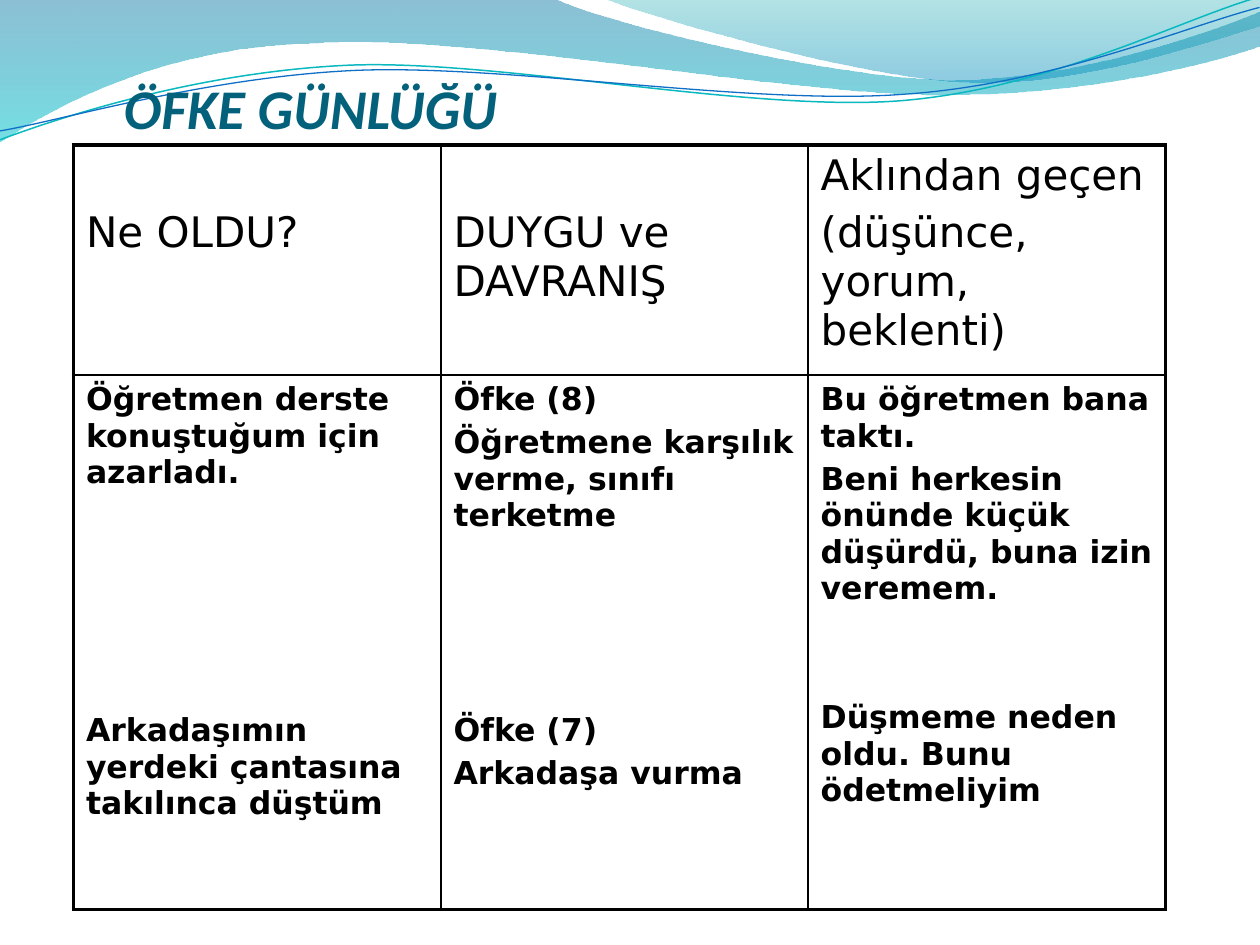
from dataclasses import dataclass

import pptx
import pptx.dml.color
import pptx.enum.text
import pptx.oxml
import pptx.oxml.ns
import pptx.util

Cm, Pt = pptx.util.Cm, pptx.util.Pt
qn = pptx.oxml.ns.qn


@dataclass(frozen=True)
class Theme:
    title_font: str = "Calibri"
    table_font: str = "DejaVu Sans"
    title_size: int = 32
    heading_size: int = 24
    body_size: int = 18
    title_color: str = "04617B"
    ink: str = "000000"
    # Gradient stops: colour and opacity in percent
    band_fill: tuple = (("0074A1", 45), ("00C6CF", 55))
    swoosh_fill: tuple = (("00A1A9", 30), ("008BBF", 45))
    teal: str = "0AB8BF"
    blue: str = "0F6FC6"
    outer_border: float = 2.25
    inner_border: float = 1


# Outlines in cm: a pair is a straight step, six numbers are a Bézier step.
BAND = [(0, 0), (11.18, -0.03),
        (12.09, 0.43, 16.87, 1.6, 19.25, 1.6), (21.67, 1.6, 24.33, 0.66, 25.4, 0.23),
        (25.43, 0.91),
        (24.97, 1.12, 22.1, 1.93, 18.95, 1.91), (15.8, 1.91, 9.7, 0.71, 6.53, 0.86),
        (3.28, 0.91, 1.17, 2.11, -0.03, 2.87)]
SWOOSH = [(12.17, -0.03),
          (12.93, 0.28, 17.32, 1.57, 19.53, 1.65), (21.74, 1.75, 24.41, 0.81, 25.4, 0.53),
          (25.4, 0)]
# Waves are given level and then tilted.
WAVE_TILT = 357.3
TEAL_WAVE = [(-0.05, 2.22),
             (1.19, 1.82, 4.01, 1.04, 7.05, 1.05), (10.05, 1.07, 15.02, 2.37, 18.08, 2.29),
             (21.13, 2.2, 23.86, 0.91, 25.4, 0.55)]
BLUE_WAVE = [(-0.04, 2.04),
             (1.16, 1.9, 4.17, 1.15, 7.2, 1.16), (10.25, 1.18, 15.13, 2.25, 18.19, 2.16),
             (21.22, 2.1, 23.93, 1.06, 25.44, 0.75)]

# Each cell lists (text, number of lines left free above it).
HEADINGS = [
    [("Ne OLDU?", 1)],
    [("DUYGU ve DAVRANIŞ", 1)],
    [("Aklından geçen", 0), ("(düşünce, yorum, beklenti)", 0)],
]
ENTRIES = [
    [("Öğretmen derste konuştuğum için azarladı.", 0),
     ("Arkadaşımın yerdeki çantasına takılınca düştüm", 5)],
    [("Öfke (8)", 0), ("Öğretmene karşılık verme, sınıfı terketme", 0),
     ("Öfke (7)", 4), ("Arkadaşa vurma", 0)],
    [("Bu öğretmen bana taktı.", 0),
     ("Beni herkesin önünde küçük düşürdü, buna izin veremem.", 0),
     ("Düşmeme neden oldu. Bunu ödetmeliyim", 2)],
]


class Painter:
    def __init__(self, page, theme):
        self.page = page
        self.theme = theme

    def color(self, value):
        return pptx.dml.color.RGBColor.from_string(value)

    def style(self, para, font, size, color, bold=False, italic=False):
        for span in para.runs:
            span.font.name = font
            span.font.size = Pt(size)
            span.font.bold = bold
            span.font.italic = italic
            span.font.color.rgb = self.color(color)

    def outline(self, steps, close):
        """Build through all points, then join each Bézier step's three into a curve."""
        points = [(Cm(step[i]), Cm(step[i + 1]))
                  for step in steps for i in range(0, len(step), 2)]
        builder = self.page.shapes.build_freeform(*points[0])
        builder.add_line_segments(points[1:], close=close)
        shape = builder.convert_to_shape()
        shape.shadow.inherit = False
        segments = iter(list(shape.element.spPr.iter(qn("a:lnTo"))))
        for step in steps[1:]:
            first = next(segments)
            if len(step) == 6:
                first.tag = qn("a:cubicBezTo")
                for _ in range(2):
                    segment = next(segments)
                    first.append(segment[0])
                    segment.getparent().remove(segment)
        return shape

    def area(self, steps, stops):
        shape = self.outline(steps, True)
        shape.line.fill.background()
        shape.fill.gradient()
        shape.fill.gradient_angle = 270
        for position, (stop, (color, _)) in enumerate(zip(shape.fill.gradient_stops, stops)):
            stop.position = position
            stop.color.rgb = self.color(color)
        for element, (_, opacity) in zip(shape.element.spPr.iter(qn("a:srgbClr")), stops):
            element.append(pptx.oxml.parse_xml(
                f'<a:alpha {pptx.oxml.ns.nsdecls("a")} val="{opacity * 1000}"/>'))

    def wave(self, steps, color, width):
        shape = self.outline(steps, False)
        shape.rotation = WAVE_TILT
        shape.fill.background()
        shape.line.color.rgb = self.color(color)
        shape.line.width = Pt(width)

    def title(self, text, left, top, width, height):
        box = self.page.shapes.add_textbox(Cm(left), Cm(top), Cm(width), Cm(height))
        frame = box.text_frame
        frame.word_wrap = True
        frame.vertical_anchor = pptx.enum.text.MSO_ANCHOR.BOTTOM
        frame.margin_left = frame.margin_right = frame.margin_bottom = 0
        frame.text = text
        self.style(frame.paragraphs[0], self.theme.title_font, self.theme.title_size,
                   self.theme.title_color, bold=True, italic=True)

    def border(self, cell, side, width):
        cell._tc.get_or_add_tcPr().append(pptx.oxml.parse_xml(
            f'<a:ln{side} {pptx.oxml.ns.nsdecls("a")} w="{Pt(width)}"><a:solidFill>'
            f'<a:srgbClr val="{self.theme.ink}"/></a:solidFill></a:ln{side}>'))

    def cell_text(self, cell, lines, size, bold):
        gap = 0.2 * size
        free_line = 1.164 * size + gap
        cell.text_frame.text = "\n".join(text for text, _ in lines)
        cell.margin_top = Cm(0.13) + Pt(lines[0][1] * free_line)
        for index, (para, (_, free)) in enumerate(zip(cell.text_frame.paragraphs, lines)):
            if index:
                para.space_before = Pt(round(gap + free * free_line, 1))
            self.style(para, self.theme.table_font, size, self.theme.ink, bold)

    def table(self, rows, left, top, widths, heights):
        """Draw rows of cells; the first row holds the headings."""
        table = self.page.shapes.add_table(
            len(heights), len(widths), Cm(left), Cm(top),
            Cm(sum(widths)), Cm(sum(heights))).table
        table.first_row = table.horz_banding = False
        for column, width in zip(table.columns, widths):
            column.width = Cm(width)
        for row, height in zip(table.rows, heights):
            row.height = Cm(height)
        for r, row in enumerate(rows):
            for c, lines in enumerate(row):
                cell = table.cell(r, c)
                size = self.theme.body_size if r else self.theme.heading_size
                self.cell_text(cell, lines, size, bold=r > 0)
                edges = {"L": c == 0, "R": c == len(widths) - 1,
                         "T": r == 0, "B": r == len(heights) - 1}
                for side, outer in edges.items():
                    self.border(cell, side, self.theme.outer_border if outer
                                else self.theme.inner_border)
                cell.fill.background()


def main():
    deck = pptx.Presentation()
    deck.slide_width, deck.slide_height = Cm(25.4), Cm(19.05)
    theme = Theme()
    painter = Painter(deck.slides.add_slide(deck.slide_layouts[6]), theme)
    painter.area(BAND, theme.band_fill)
    painter.area(SWOOSH, theme.swoosh_fill)
    painter.wave(TEAL_WAVE, theme.teal, 0.85)
    painter.wave(BLUE_WAVE, theme.blue, 0.75)
    painter.table([HEADINGS, ENTRIES], 1.48, 2.92, [7.41, 7.4, 7.2], [4.64, 10.77])
    painter.title("ÖFKE GÜNLÜĞÜ", 2.5, 0.33, 22.9, 2.51)
    deck.save("out.pptx")


if __name__ == "__main__":
    main()
